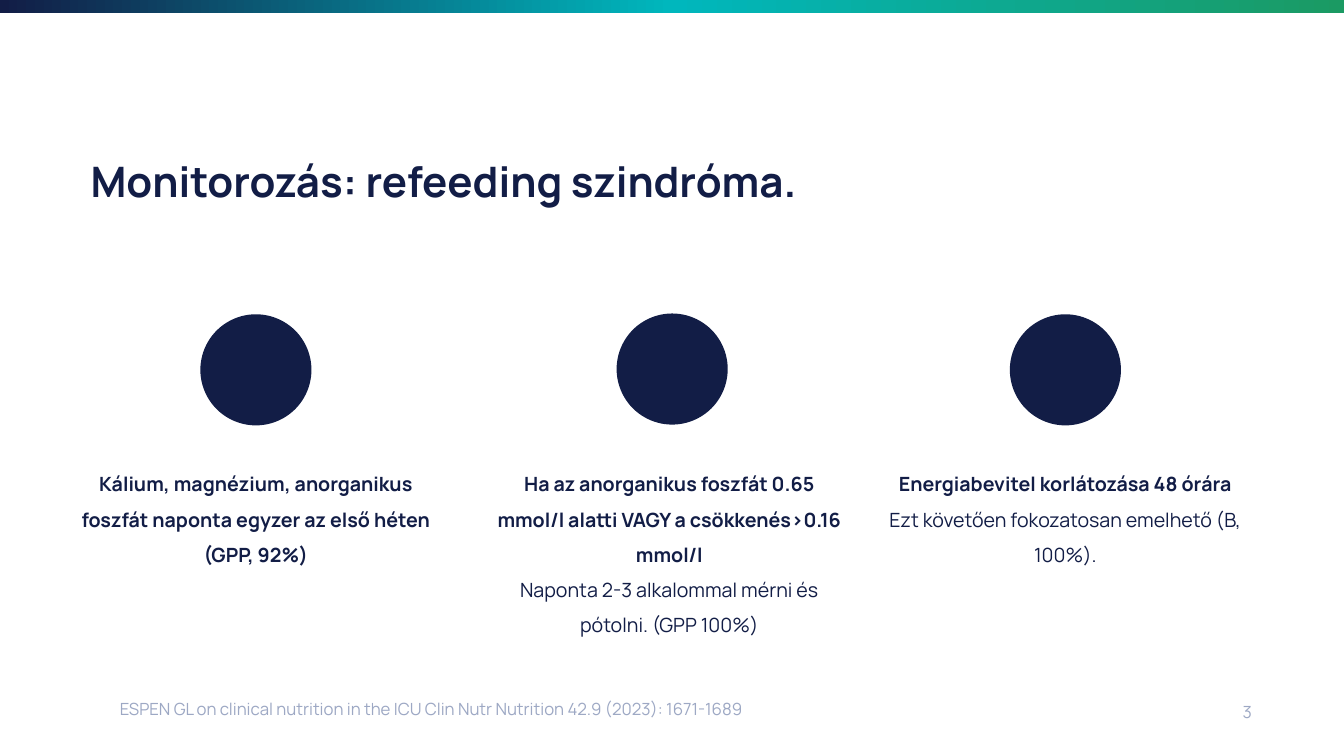
import copy

from pptx import Presentation
from pptx import util as u
from pptx.dml.color import RGBColor
from pptx.enum import shapes, text

NAVY = RGBColor(0x12, 0x1D, 0x46)
TEAL = RGBColor(0x00, 0xB7, 0xBD)
GREEN = RGBColor(0x1B, 0x9A, 0x63)
GREY = RGBColor(0x9D, 0xA8, 0xC4)
FONT = "Manrope"
LEFT, CENTER, RIGHT = text.PP_ALIGN.LEFT, text.PP_ALIGN.CENTER, text.PP_ALIGN.RIGHT


class SlideBuilder:
    """Hold the style and the current slide, and add each kind of element."""

    def __init__(self, presentation):
        self.slide = presentation.slides.add_slide(presentation.slide_layouts[5])

    def place(self, shape, box):
        shape.left, shape.top, shape.width, shape.height = (u.Cm(value) for value in box)

    def set_lines(self, shape, lines, size, color, align, spacing):
        frame = shape.text_frame
        frame.word_wrap = True
        frame.auto_size = text.MSO_AUTO_SIZE.NONE
        frame.vertical_anchor = text.MSO_ANCHOR.TOP
        frame.text = "\n".join(line for line, bold in lines)
        for paragraph, (line, bold) in zip(frame.paragraphs, lines):
            paragraph.alignment = align
            paragraph.line_spacing = spacing
            for run in paragraph.runs:
                run.font.name = FONT
                run.font.size = u.Pt(size)
                run.font.bold = bold
                run.font.color.rgb = color

    def title(self, box, line):
        shape = self.slide.shapes.title
        self.place(shape, box)
        self.set_lines(shape, [(line, True)], 30, NAVY, LEFT, 1.0)

    def text_box(self, box, lines, size, color, align, spacing):
        shape = self.slide.shapes.add_textbox(*(u.Cm(value) for value in box))
        self.set_lines(shape, lines, size, color, align, spacing)

    def shape(self, kind, box):
        shape = self.slide.shapes.add_shape(kind, *(u.Cm(value) for value in box))
        shape.shadow.inherit = False
        shape.line.fill.background()
        return shape

    def circle(self, left, top, diameter):
        circle = self.shape(shapes.MSO_SHAPE.OVAL, (left, top, diameter, diameter))
        circle.fill.solid()
        circle.fill.fore_color.rgb = NAVY

    def gradient_bar(self, box, colors):
        bar = self.shape(shapes.MSO_SHAPE.RECTANGLE, box)
        bar.fill.gradient()
        bar.fill.gradient_angle = 0
        stop_list = bar.element.xpath(".//a:gsLst")[0]
        while len(stop_list) < len(colors):
            stop_list.append(copy.deepcopy(stop_list[-1]))
        for index, (stop, color) in enumerate(zip(bar.fill.gradient_stops, colors)):
            stop.position = index / (len(colors) - 1)
            stop.color.rgb = color


COLUMNS = [
    (1.7, 5.05, 7.92, [
        ("Kálium, magnézium, anorganikus foszfát naponta egyzer az első héten (GPP, 92%)", True),
    ]),
    (12.12, 15.54, 7.9, [
        ("Ha az anorganikus foszfát 0.65 mmol/l alatti VAGY a csökkenés>0.16 mmol/l", True),
        ("Naponta 2-3 alkalommal mérni és pótolni. (GPP 100%)", False),
    ]),
    (22.1, 25.45, 7.92, [
        ("Energiabevitel korlátozása 48 órára", True),
        ("Ezt követően fokozatosan emelhető (B, 100%).", False),
    ]),
]
SOURCE = "ESPEN GL on clinical nutrition in the ICU Clin Nutr Nutrition 42.9 (2023): 1671-1689"


def main():
    presentation = Presentation()
    presentation.slide_width = u.Cm(33.87)
    presentation.slide_height = u.Cm(19.05)
    builder = SlideBuilder(presentation)
    builder.title((2.03, 3.78, 25.22, 1.55), "Monitorozás: refeeding szindróma.")
    for text_left, circle_left, circle_top, lines in COLUMNS:
        builder.circle(circle_left, circle_top, 2.8)
        builder.text_box((text_left, 11.48, 9.5, 4.75), lines, 14, NAVY, CENTER, 1.5)
    builder.gradient_bar((0, 0, 33.87, 0.33), [NAVY, TEAL, GREEN])
    builder.text_box((2.77, 16.97, 18.03, 1.27), [(SOURCE, False)], 12, GREY, LEFT, 2.0)
    builder.text_box((29.13, 17.04, 2.67, 1.02), [("3", False)], 12, GREY, RIGHT, 2.0)
    presentation.save("out.pptx")


if __name__ == "__main__":
    main()
